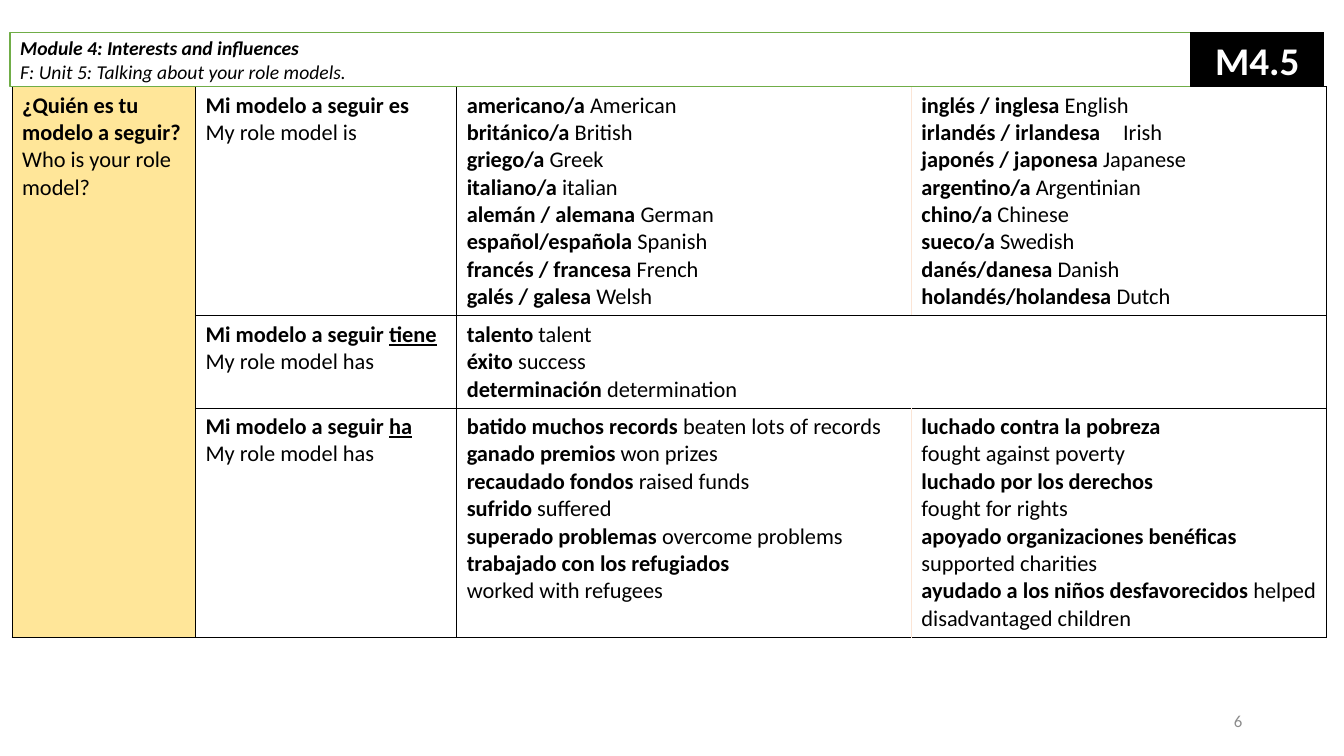
from dataclasses import dataclass

from lxml.etree import SubElement
from pptx import Presentation
from pptx.dml.color import RGBColor as RGB
from pptx.enum.shapes import MSO_SHAPE as SHAPE
from pptx.enum.text import MSO_ANCHOR as ANCHOR, PP_ALIGN as ALIGN
from pptx.oxml.ns import qn
from pptx.util import Inches, Pt


@dataclass(frozen=True)
class Theme:
    font: str = "Calibri"
    black: str = "000000"
    white: str = "FFFFFF"
    question: str = "FFE699"
    divider: str = "FBE5D6"
    green: str = "70AD47"
    grey: str = "8C8C8C"
    body: int = 16
    heading: int = 14
    badge: int = 28
    number: int = 12


T = Theme()


def style(r, size, color=T.black, bold=False, italic=False, underline=False):
    f = r.font
    f.name, f.size, f.bold, f.italic = T.font, Pt(size), bold, italic
    f.underline = underline
    f.color.rgb = RGB.from_string(color)


def set_border(cell, side, color):
    """Draw one side (L, R, T or B) of a cell as a 1 pt line."""
    ln = SubElement(cell._tc.get_or_add_tcPr(), qn(f"a:ln{side}"), w=str(Pt(1)))
    SubElement(SubElement(ln, qn("a:solidFill")), qn("a:srgbClr"), val=color)


# Each line is Spanish|English; Spanish after an underscore is underlined.
CELLS = {
    (0, 0): ["¿Quién es tu modelo a seguir?", "|Who is your role model?"],
    (0, 1): ["Mi modelo a seguir es", "|My role model is"],
    (0, 2): [
        "americano/a |American", "británico/a |British", "griego/a| Greek",
        "italiano/a |italian", "alemán / alemana| German",
        "español/española |Spanish", "francés / francesa |French",
        "galés / galesa |Welsh",
    ],
    (0, 3): [
        "inglés / inglesa |English", "irlandés / irlandesa\t|Irish",
        "japonés / japonesa |Japanese", "argentino/a| Argentinian",
        "chino/a| Chinese", "sueco/a| Swedish", "danés/danesa| Danish",
        "holandés/holandesa| Dutch",
    ],
    (1, 1): ["Mi modelo a seguir _tiene", "|My role model has"],
    (1, 2): ["talento |talent", "éxito |success", "determinación |determination"],
    (2, 1): ["Mi modelo a seguir _ha", "|My role model has"],
    (2, 2): [
        "batido muchos records |beaten lots of records",
        "ganado premios |won prizes", "recaudado fondos |raised funds",
        "sufrido |suffered", "superado problemas |overcome problems",
        "trabajado con los refugiados", "|worked with refugees",
    ],
    (2, 3): [
        "luchado contra la pobreza", "|fought against poverty",
        "luchado por los derechos", "|fought for rights",
        "apoyado organizaciones benéficas", "|supported charities",
        "ayudado a los niños desfavorecidos |helped disadvantaged children",
    ],
}
COLS = [1.82, 2.59, 4.51, 4.12]
ROWS = [2.27, 0.91, 2.27]
BAR_LEFT, BAR_TOP, BAR_W, BAR_H = 0.1, 0.32, 13.03, 0.54
BADGE_W = 1.32

prs = Presentation()
prs.slide_width, prs.slide_height = Inches(13.33), Inches(7.5)
s = prs.slides.add_slide(prs.slide_layouts[5])

# Vocabulary table
table = s.shapes.add_table(
    len(ROWS), len(COLS), Inches(0.12), Inches(BAR_TOP + BAR_H),
    Inches(sum(COLS)), Inches(sum(ROWS))).table
table.first_row = table.horz_banding = False
for col, width in zip(table.columns, COLS):
    col.width = Inches(width)
for row, height in zip(table.rows, ROWS):
    row.height = Inches(height)
table.cell(0, 0).merge(table.cell(2, 0))
table.cell(1, 2).merge(table.cell(1, 3))

for i in range(len(ROWS)):
    for j in range(len(COLS)):
        cell = table.cell(i, j)
        for side in "LRTB":
            inner = (j, side) in ((2, "R"), (3, "L")) and i != 1
            set_border(cell, side, T.divider if inner else T.black)
        cell.fill.solid()
        cell.fill.fore_color.rgb = RGB.from_string(T.white if j else T.question)
        tf = cell.text_frame
        for n, line in enumerate(CELLS.get((i, j), [])):
            p = tf.add_paragraph() if n else tf.paragraphs[0]
            spanish, _, english = line.partition("|")
            plain, _, underlined = spanish.partition("_")
            for text, bold, under in ((plain, True, False),
                                      (underlined, True, True),
                                      (english, False, False)):
                if text:
                    r = p.add_run()
                    r.text = text
                    style(r, T.body, bold=bold, underline=under)

# Heading bar, in front of the table
title = s.shapes.title
s.shapes._spTree.append(title._element)
title.left, title.top = Inches(BAR_LEFT), Inches(BAR_TOP)
title.width, title.height = Inches(BAR_W), Inches(BAR_H)
title.fill.solid()
title.fill.fore_color.rgb = RGB.from_string(T.white)
title.line.color.rgb = RGB.from_string(T.green)
title.line.width = Pt(1)
tf = title.text_frame
tf.text = "Module 4: Interests and influences\nF: Unit 5: Talking about your role models."
tf.vertical_anchor = ANCHOR.MIDDLE
for n, p in enumerate(tf.paragraphs):
    p.alignment = ALIGN.LEFT
    style(p.runs[0], T.heading, bold=n == 0, italic=True)

# Unit badge at the right end of the bar
badge = s.shapes.add_shape(
    SHAPE.RECTANGLE, Inches(BAR_LEFT + BAR_W - BADGE_W), Inches(BAR_TOP),
    Inches(BADGE_W), Inches(BAR_H))
badge.shadow.inherit = False
badge.fill.solid()
badge.fill.fore_color.rgb = RGB.from_string(T.black)
badge.line.color.rgb = RGB.from_string(T.black)
badge.line.width = Pt(1)

# Slide number
number = s.shapes.add_textbox(Inches(9.42), Inches(6.95), Inches(3), Inches(0.4))

for sp, text, size, color, align in (
        (badge, "M4.5", T.badge, T.white, ALIGN.CENTER),
        (number, "6", T.number, T.grey, ALIGN.RIGHT)):
    tf = sp.text_frame
    tf.text, tf.word_wrap, tf.vertical_anchor = text, True, ANCHOR.MIDDLE
    p = tf.paragraphs[0]
    p.alignment = align
    style(p.runs[0], size, color, bold=sp is badge)

prs.save("out.pptx")
